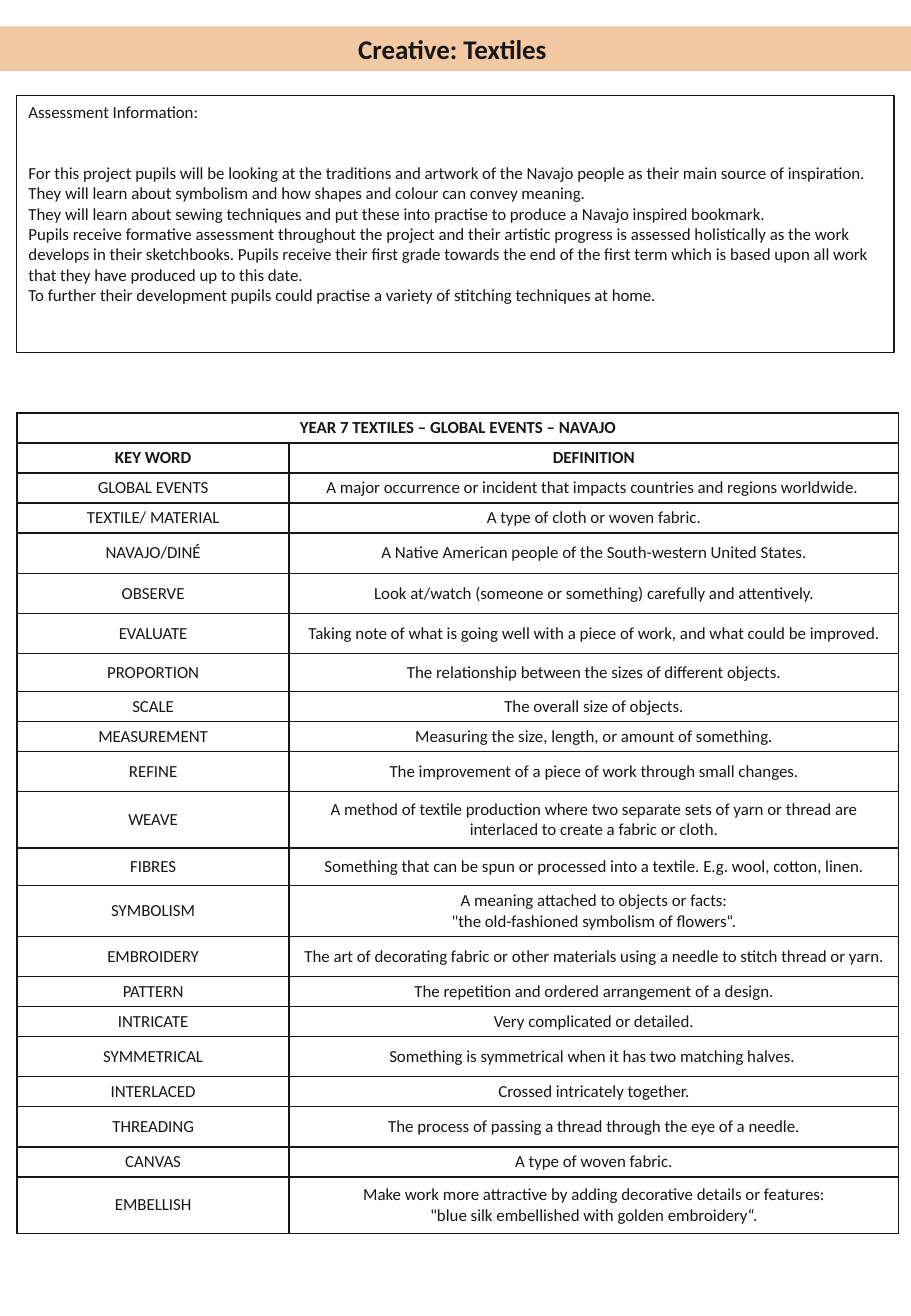
from lxml.etree import SubElement
from pptx import Presentation
from pptx.dml.color import RGBColor
from pptx.enum.shapes import MSO_SHAPE as Shape
from pptx.enum.text import MSO_ANCHOR as Anchor, PP_ALIGN as Align
from pptx.oxml.ns import qn
from pptx.util import Pt

INK = "181717"
PEACH = "F3C9A4"
BODY = {"name": "Calibri", "size": Pt(10), "bold": False}
HEADING = {**BODY, "bold": True}
TITLE = {**HEADING, "size": Pt(16)}

LINE, MEDIUM, TALL, PAIR, DOUBLE = 17.8, 22.4, 23.8, 30, 33.5
COLUMNS = (161.3, 361.2)
HEADINGS = [
    (LINE, "YEAR 7 TEXTILES – GLOBAL EVENTS – NAVAJO", ""),
    (LINE, "KEY WORD", "DEFINITION"),
]
GLOSSARY = [
    (LINE, "GLOBAL EVENTS", "A major occurrence or incident that impacts countries and regions worldwide. "),
    (LINE, "TEXTILE/ MATERIAL", "A type of cloth or woven fabric."),
    (TALL, "NAVAJO/DINÉ", "A Native American people of the South-western United States."),
    (TALL, "OBSERVE", "Look at/watch (someone or something) carefully and attentively."),
    (TALL, "EVALUATE", "Taking note of what is going well with a piece of work, and what could be improved."),
    (MEDIUM, "PROPORTION", "The relationship between the sizes of different objects."),
    (LINE, "SCALE", "The overall size of objects."),
    (LINE, "MEASUREMENT", "Measuring the size, length, or amount of something."),
    (TALL, "REFINE", "The improvement of a piece of work through small changes."),
    (DOUBLE, "WEAVE", "A method of textile production where two separate sets of yarn or thread are "
                      "interlaced to create a fabric or cloth."),
    (MEDIUM, "FIBRES", "Something that can be spun or processed into a textile. E.g. wool, cotton, linen."),
    (PAIR, "SYMBOLISM", 'A meaning attached to objects or facts:\v"the old-fashioned symbolism of flowers“.'),
    (TALL, "EMBROIDERY", "The art of decorating fabric or other materials using a needle to stitch thread or yarn."),
    (LINE, "PATTERN", "The repetition and ordered arrangement of a design."),
    (LINE, "INTRICATE", "Very complicated or detailed."),
    (TALL, "SYMMETRICAL", "Something is symmetrical when it has two matching halves. "),
    (LINE, "INTERLACED", "Crossed intricately together."),
    (TALL, "THREADING", "The process of passing a thread through the eye of a needle."),
    (LINE, "CANVAS", "A type of woven fabric."),
    (DOUBLE, "EMBELLISH", "Make work more attractive by adding decorative details or features:\n"
                          '"blue silk embellished with golden embroidery“.'),
]
ASSESSMENT = [
    "Assessment Information:",
    "For this project pupils will be looking at the traditions and artwork of the Navajo people as their main "
    "source of inspiration. They will learn about symbolism and how shapes and colour can convey meaning.",
    "They will learn about sewing techniques and put these into practise to produce a Navajo inspired bookmark.",
    "Pupils receive formative assessment throughout the project and their artistic progress is assessed "
    "holistically as the work develops in their sketchbooks. Pupils receive their first grade towards the end "
    "of the first term which is based upon all work that they have produced up to this date.",
    "To further their development pupils could practise a variety of stitching techniques at home.",
]


def colour(value):
    return RGBColor.from_string(value)


def write(frame, text, style, align):
    frame.text = text
    for paragraph in frame.paragraphs:
        paragraph.alignment = align
        for name, value in style.items():
            setattr(paragraph.font, name, value)
        paragraph.font.color.rgb = colour(INK)


def add_panel(slide, box, text, style, align, anchor, fill=None, line=None):
    panel = slide.shapes.add_shape(Shape.RECTANGLE, *map(Pt, box))
    panel.shadow.inherit = False
    for part, value in ((panel.fill, fill), (panel.line.fill, line)):
        if value:
            part.solid()
            part.fore_color.rgb = colour(value)
        else:
            part.background()
    if line:
        panel.line.width = Pt(0.75)
    panel.text_frame.word_wrap = True
    panel.text_frame.vertical_anchor = anchor
    write(panel.text_frame, text, style, align)
    return panel


def add_borders(cell):
    properties = cell._tc.get_or_add_tcPr()
    for position, side in enumerate(("lnL", "lnR", "lnT", "lnB")):
        border = SubElement(properties, qn(f"a:{side}"), w=str(Pt(1)))
        SubElement(SubElement(border, qn("a:solidFill")), qn("a:srgbClr"), val=INK)
        properties.insert(position, border)


def fill_cell(cell, text, style):
    layout = {
        "vertical_anchor": Anchor.MIDDLE,
        "margin_left": Pt(5.4), "margin_right": Pt(5.4),
        "margin_top": Pt(2.7), "margin_bottom": Pt(2.7),
    }
    for name, value in layout.items():
        setattr(cell, name, value)
    cell.fill.background()
    write(cell.text_frame, text, style, Align.CENTER)
    add_borders(cell)


def add_glossary(slide, left, top):
    entries = HEADINGS + GLOSSARY
    height = sum(entry[0] for entry in entries)
    glossary = slide.shapes.add_table(
        len(entries), len(COLUMNS), Pt(left), Pt(top), Pt(sum(COLUMNS)), Pt(height)).table
    glossary.first_row = glossary.horz_banding = False
    for column, width in zip(glossary.columns, COLUMNS):
        column.width = Pt(width)
    for index, (row_height, *texts) in enumerate(entries):
        glossary.rows[index].height = Pt(row_height)
        style = HEADING if index < len(HEADINGS) else BODY
        for column, text in enumerate(texts):
            fill_cell(glossary.cell(index, column), text, style)
    glossary.cell(0, 0).merge(glossary.cell(0, 1))


def main():
    deck = Presentation()
    deck.slide_width, deck.slide_height = Pt(540), Pt(779.76)
    slide = deck.slides.add_slide(deck.slide_layouts[6])
    add_glossary(slide, 10.1, 244.8)
    add_panel(slide, (0, 15.6, 540, 26.6), "Creative: Textiles ", TITLE,
              Align.CENTER, Anchor.MIDDLE, fill=PEACH)
    assessment = add_panel(slide, (9.8, 56.5, 520.2, 152.4), "\n".join(ASSESSMENT), BODY,
                           Align.LEFT, Anchor.TOP, line=INK)
    assessment.text_frame.paragraphs[1].space_before = Pt(24.4)
    deck.save("out.pptx")


if __name__ == "__main__":
    main()
